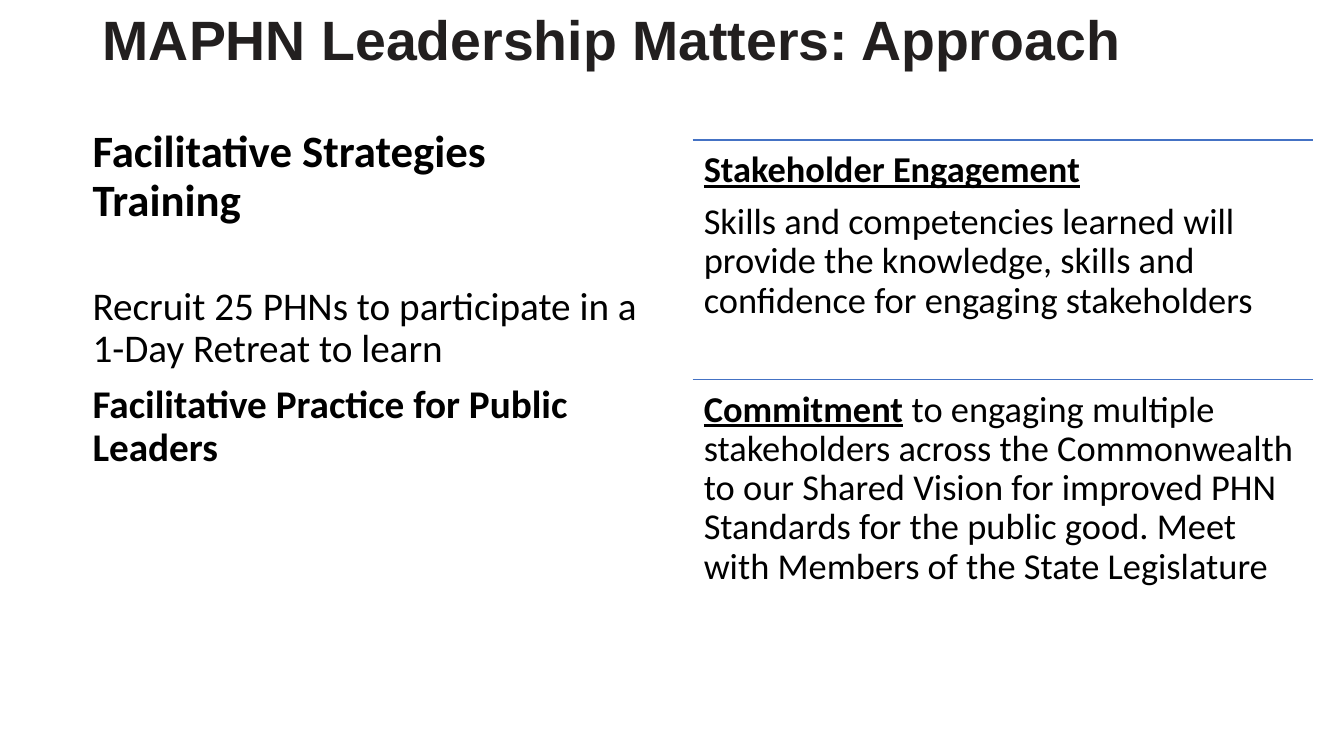
"""Build the leadership approach slide."""
from lxml.etree import SubElement
from pptx import Presentation
from pptx.dml.color import RGBColor
from pptx.enum.shapes import MSO_CONNECTOR
from pptx.enum.text import MSO_ANCHOR, MSO_AUTO_SIZE, PP_ALIGN
from pptx.oxml.ns import qn
from pptx.util import Inches, Pt

INK = RGBColor(0x22, 0x1F, 0x1F)
BLACK = RGBColor(0, 0, 0)
BLUE = RGBColor(0x44, 0x72, 0xC4)

BOLD = {"bold": True}
HEAD = {"bold": True, "underline": True}
PLAIN = {}

TITLE = [[("MAPHN Leadership Matters: Approach\v", BOLD)]]
TOPIC = [[("Facilitative Strategies Training", BOLD)]]
PLAN = [
    [("Recruit 25 PHNs to participate in a 1-Day Retreat to learn", PLAIN)],
    [("Facilitative Practice for Public Leaders", BOLD)],
]
GOALS = [
    [
        [("Stakeholder Engagement", HEAD)],
        [("Skills and competencies learned will provide the knowledge, skills "
          "and confidence for engaging stakeholders", PLAIN)],
    ],
    [
        [("Commitment", HEAD),
         (" to engaging multiple stakeholders across the Commonwealth to our "
          "Shared Vision for improved PHN Standards for the public good. Meet "
          "with Members of the State Legislature", PLAIN)],
    ],
]
LEFT, TOP, WIDE, HIGH = 6.87, 1.39, 6.15, 2.375


def set_all(item, values):
    """Set each named value on the item."""
    for name, value in values.items():
        setattr(item, name, value)


def fill_text(shape, paras, size, gap=0, face="Calibri", color=BLACK,
              anchor=MSO_ANCHOR.TOP, inset=None):
    """Write paragraphs of styled runs into the shape."""
    frame = shape.text_frame
    set_all(frame, {"word_wrap": True, "auto_size": MSO_AUTO_SIZE.NONE,
                    "vertical_anchor": anchor})
    if inset:
        sides = ("left", "top", "right", "bottom")
        set_all(frame, {f"margin_{side}": Inches(inset) for side in sides})
    for i, runs in enumerate(paras):
        para = frame.add_paragraph() if i else frame.paragraphs[0]
        set_all(para, {"alignment": PP_ALIGN.LEFT, "line_spacing": 0.9,
                       "space_before": Pt(gap if i else 0)})
        for words, style in runs:
            text, *breaks = words.split("\v")
            run = para.add_run()
            run.text = text
            set_all(run.font, {"name": face, "size": Pt(size), "bold": False, **style})
            run.font.color.rgb = color
            for _ in breaks:
                para.add_line_break()


def add_text(slide, place, paras, size, **format):
    """Add a text box at the place."""
    box = slide.shapes.add_textbox(*map(Inches, place))
    fill_text(box, paras, size, **format)


def add_rule(slide, top):
    """Draw the thin line above a goal."""
    ends = (LEFT, top, LEFT + WIDE, top)
    rule = slide.shapes.add_connector(MSO_CONNECTOR.STRAIGHT, *map(Inches, ends))
    rule.line.color.rgb = BLUE
    rule.line.width = Pt(1)
    SubElement(rule._element.spPr, qn("a:effectLst"))


def main():
    """Make the slide and save it."""
    deck = Presentation()
    set_all(deck, {"slide_width": Inches(13.33), "slide_height": Inches(7.5)})
    slide = deck.slides.add_slide(deck.slide_layouts[5])
    title = slide.shapes.title
    set_all(title, {"left": Inches(0.92), "top": Inches(0.4),
                    "width": Inches(11.5), "height": Inches(0.78)})
    fill_text(title, TITLE, 39.6, face="Arial", color=INK, anchor=MSO_ANCHOR.MIDDLE)
    add_text(slide, (0.82, 1.39, 5.64, 0.9), TOPIC, 32, anchor=MSO_ANCHOR.BOTTOM)
    add_text(slide, (0.82, 2.79, 5.64, 4.54), PLAN, 28, gap=10)
    for i, goal in enumerate(GOALS):
        top = TOP + i * HIGH
        add_rule(slide, top)
        add_text(slide, (LEFT, top, WIDE, HIGH), goal, 26, gap=9, inset=0.11)
    deck.save("out.pptx")


if __name__ == "__main__":
    main()
